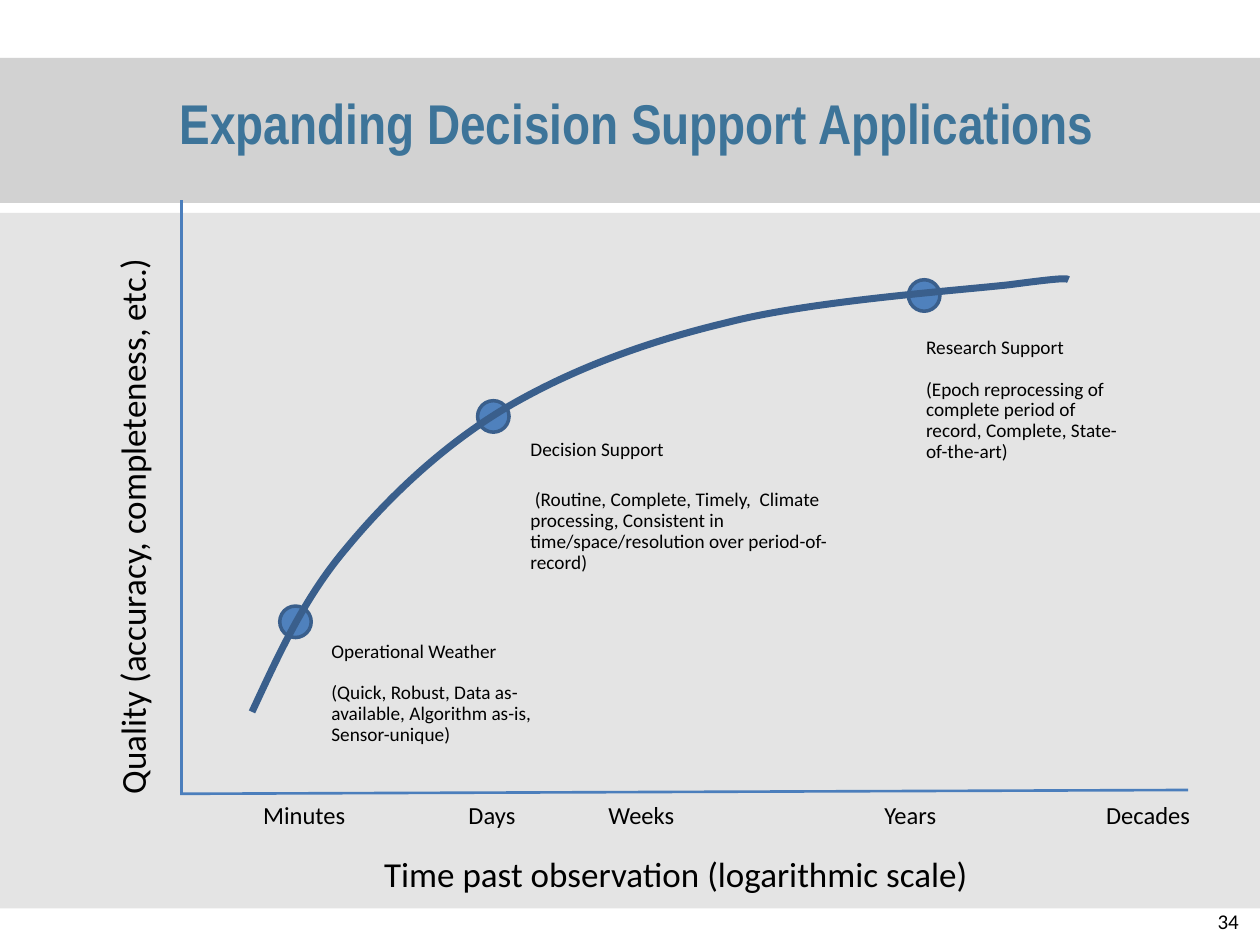
from lxml import etree
from pptx import Presentation
from pptx.dml.color import RGBColor
from pptx.enum import shapes, text
from pptx.oxml.ns import qn
from pptx.util import Inches, Pt

BLACK = RGBColor(0x00, 0x00, 0x00)
TITLE_BLUE = RGBColor(0x3D, 0x74, 0x99)
AXIS_BLUE = RGBColor(0x4B, 0x7E, 0xBC)
CURVE_BLUE = RGBColor(0x3A, 0x5F, 0x8C)
MARKER_BLUE = RGBColor(0x4F, 0x81, 0xBD)
BODY_GREY = RGBColor(0xD9, 0xD9, 0xD9)
BAND_GREY = RGBColor(0xBF, 0xBF, 0xBF)

MARKERS = [(2.22, 4.81), (3.79, 3.18), (7.21, 2.22)]
TIME_LABELS = [
    ("Minutes", 1.99, 0.89), ("Days", 3.62, 0.6), ("Weeks", 4.73, 0.75),
    ("Years", 6.92, 0.7), ("Decades", 8.68, 0.98),
]
# Box, left inset, gap after the heading in points, heading, details
NOTES = [
    ((2.52, 5.09, 2.01, 1.59), 0.11, 12, "Operational Weather",
     "(Quick, Robust, Data as-available, Algorithm as-is, Sensor-unique)"),
    ((4.01, 3.49, 2.95, 2.69), 0.2, 17, "Decision Support",
     " (Routine, Complete, Timely,  Climate processing, Consistent in "
     "time/space/resolution over period-of-record)"),
    ((7.08, 2.68, 1.9, 3.44), 0.27, 12, "Research Support",
     "(Epoch reprocessing of complete period of record, Complete, State-of-the-art)"),
]
# Start point, then two control points and an end point for each segment
CURVE = [
    (2, 5.65),
    (2.21, 5.2), (2.41, 4.75), (2.75, 4.35),
    (3.08, 3.95), (3.51, 3.54), (4.01, 3.24),
    (4.52, 2.94), (5.1, 2.72), (5.77, 2.56),
    (6.43, 2.39), (7.55, 2.31), (8.01, 2.26),
    (8.46, 2.2), (8.47, 2.21), (8.48, 2.22),
]


def add_band(s, top, height, color):
    sp = s.shapes.add_shape(shapes.MSO_SHAPE.RECTANGLE, 0, Inches(top),
                            Inches(10), Inches(height))
    sp.shadow.inherit = False
    sp.fill.solid()
    sp.fill.fore_color.rgb = color
    sp.line.fill.background()
    clr = sp._element.spPr.find(".//" + qn("a:srgbClr"))
    etree.SubElement(clr, qn("a:alpha")).set("val", "70000")


def add_run(p, words, size, font="Calibri", color=BLACK, bold=False):
    r = p.add_run()
    r.text = words
    r.font.name = font
    r.font.size = Pt(size)
    r.font.color.rgb = color
    r.font.bold = bold


def add_box(s, box, wrap=True):
    sp = s.shapes.add_textbox(*map(Inches, box))
    sp.text_frame.word_wrap = wrap
    return sp


def add_label(s, box, words, size, wrap=True, align=text.PP_ALIGN.LEFT, **style):
    sp = add_box(s, box, wrap)
    p = sp.text_frame.paragraphs[0]
    p.alignment = align
    add_run(p, words, size, **style)
    return sp


def add_note(s, box, inset, gap, heading, details):
    tf = add_box(s, box).text_frame
    tf.margin_left = Inches(inset)
    tf.margin_top = tf.margin_right = tf.margin_bottom = 0
    p = tf.paragraphs[0]
    p.space_after = Pt(gap)
    add_run(p, heading, 11)
    add_run(tf.add_paragraph(), details, 11)
    for p in tf.paragraphs:
        p.line_spacing = 0.9


def add_axis(s, x1, y1, x2, y2):
    line = s.shapes.add_connector(shapes.MSO_CONNECTOR.STRAIGHT,
                                  *map(Inches, (x1, y1, x2, y2)))
    line.line.color.rgb = AXIS_BLUE
    line.line.width = Pt(1.5)
    etree.SubElement(line._element.spPr, qn("a:effectLst"))


def add_marker(s, left, top):
    sp = s.shapes.add_shape(shapes.MSO_SHAPE.FLOWCHART_CONNECTOR,
                            *map(Inches, (left, top, 0.25, 0.25)))
    sp.shadow.inherit = False
    sp.fill.solid()
    sp.fill.fore_color.rgb = MARKER_BLUE
    sp.line.color.rgb = CURVE_BLUE
    sp.line.width = Pt(2)


def add_curve(s, points):
    """Draw a smooth curve, turning each three line points into one Bezier."""
    start, *rest = [(Inches(x), Inches(y)) for x, y in points]
    builder = s.shapes.build_freeform(*start)
    builder.add_line_segments(rest, close=False)
    sp = builder.convert_to_shape()
    sp.shadow.inherit = False
    sp.fill.background()
    sp.line.color.rgb = CURVE_BLUE
    sp.line.width = Pt(4)
    outline = sp._element.spPr.find(".//" + qn("a:path"))
    steps = outline.findall(qn("a:lnTo"))
    for i in range(0, len(steps), 3):
        bezier = etree.SubElement(outline, qn("a:cubicBezTo"))
        for step in steps[i:i + 3]:
            bezier.append(step[0])
            outline.remove(step)


def main():
    prs = Presentation()
    prs.slide_width, prs.slide_height = Inches(10), Inches(7.5)
    s = prs.slides.add_slide(prs.slide_layouts[6])

    add_band(s, 1.69, 5.52, BODY_GREY)
    add_band(s, 0.46, 1.15, BAND_GREY)
    add_label(s, (8.75, 7.16, 1.18, 0.27), "34", 12, align=text.PP_ALIGN.RIGHT)

    quality = add_label(s, (-1.89, 3.24, 5.88, 0.44),
                        "Quality (accuracy, completeness, etc.)", 20)
    quality.rotation = 270
    for words, left, width in TIME_LABELS:
        add_label(s, (left, 6.3, width, 0.34), words, 14, wrap=False)
    add_axis(s, 1.44, 1.59, 1.44, 6.29)
    add_axis(s, 9.43, 6.27, 1.43, 6.3)

    for note in NOTES:
        add_note(s, *note)
    for left, top in MARKERS:
        add_marker(s, left, top)
    add_curve(s, CURVE)

    add_label(s, (2.95, 6.72, 6.32, 0.44),
              "Time past observation (logarithmic scale)", 20)
    title = add_label(s, (0.41, 0.34, 9.3, 1.25),
                      "Expanding Decision Support Applications", 32,
                      align=text.PP_ALIGN.CENTER, font="Arial Narrow",
                      color=TITLE_BLUE, bold=True)
    title.text_frame.vertical_anchor = text.MSO_ANCHOR.MIDDLE

    prs.save("out.pptx")


if __name__ == "__main__":
    main()
